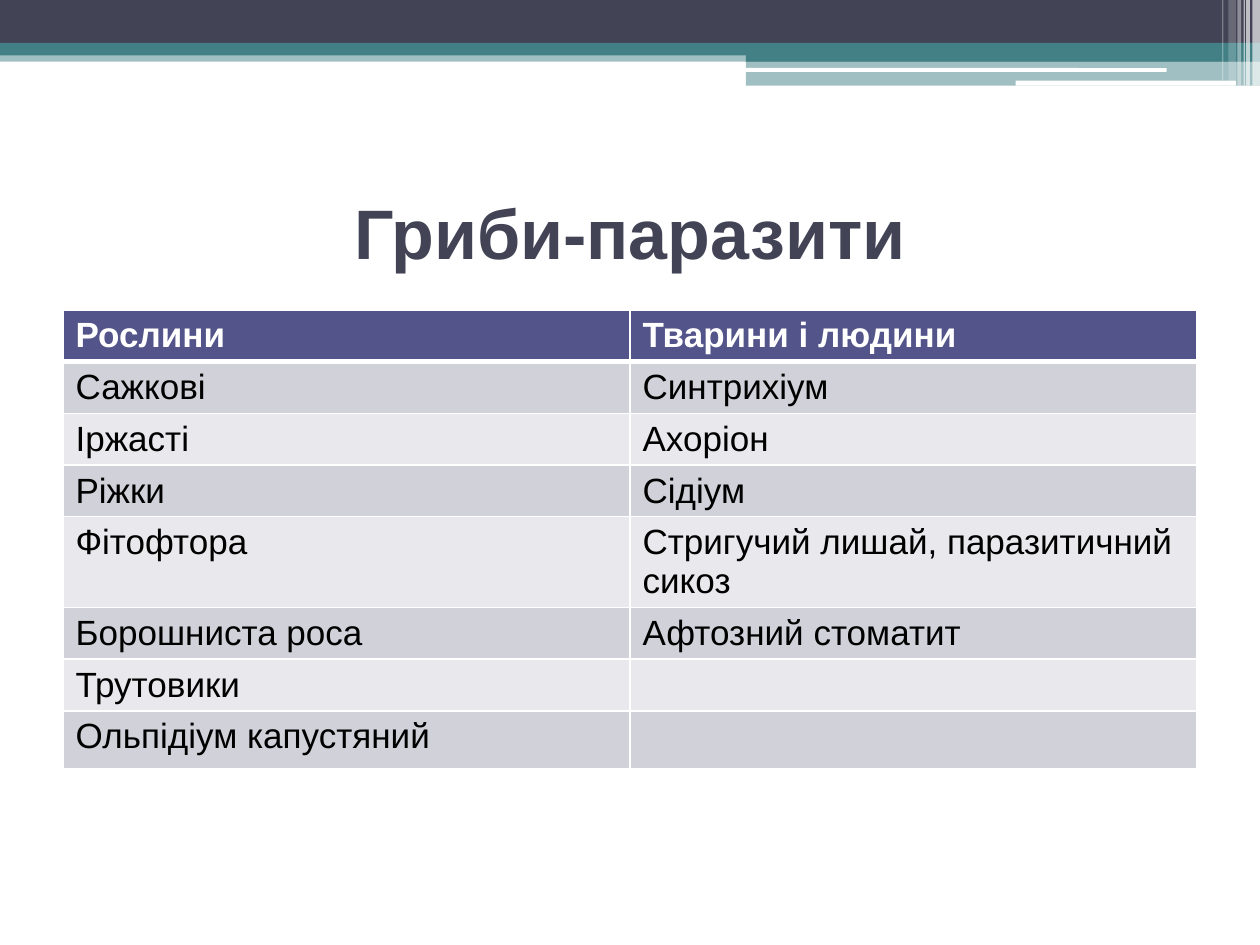
from lxml import etree
from pptx import Presentation
from pptx.dml.color import RGBColor
from pptx.enum.shapes import MSO_SHAPE
from pptx.enum.text import MSO_ANCHOR, PP_ALIGN
from pptx.oxml.ns import qn
from pptx.util import Inches, Pt

RECT, ROUND = MSO_SHAPE.RECTANGLE, MSO_SHAPE.ROUNDED_RECTANGLE
MIDDLE, CENTER = MSO_ANCHOR.MIDDLE, PP_ALIGN.CENTER
FONT = "Arial"
DARK, TEAL, WHITE, BLACK = "424456", "438086", "FFFFFF", "000000"
HEADER_FILL, BANDS = "53548A", ("D1D1DA", "E9E9ED")

TITLE = "Гриби-паразити"
ROWS = [
    ("Рослини", "Тварини і людини"),
    ("Сажкові", "Синтрихіум"),
    ("Іржасті", "Ахоріон"),
    ("Ріжки", "Сідіум"),
    ("Фітофтора", "Стригучий лишай, паразитичний сикоз"),
    ("Борошниста роса", "Афтозний стоматит"),
    ("Трутовики", ""),
    ("Ольпідіум капустяний", ""),
]
ROW_HEIGHT, LAST_ROW_HEIGHT = 0.41, 0.46

BANNER = [
    (RECT, (0, 0.4, 10, 0.09), TEAL, 50),
    (RECT, (0, 0, 10, 0.34), DARK, 100),
    (RECT, (0, 0.34, 10, 0.1), TEAL, 100),
    (RECT, (5.92, 0.39, 4.08, 0.1), TEAL, 100),
    (RECT, (5.92, 0.48, 4.08, 0.2), TEAL, 50),
    (ROUND, (5.91, 0.54, 3.35, 0.03), WHITE, 100),
    (ROUND, (8.06, 0.64, 1.75, 0.04), WHITE, 100),
]
STRIPES = [
    (9.94, 0.06, 0.68, 65),
    (9.89, 0.03, 0.68, 65),
    (9.87, 0.01, 0.68, 60),
    (9.82, 0.03, 0.68, 40),
    (9.75, 0.06, 0.64, 20),
    (9.7, 0.01, 0.64, 30),
]


def paint(fill, color):
    fill.solid()
    fill.fore_color.rgb = RGBColor.from_string(color)


def add_bar(slide, kind, place, color, opacity):
    bar = slide.shapes.add_shape(kind, *map(Inches, place))
    bar.shadow.inherit = False
    bar.line.fill.background()
    paint(bar.fill, color)
    if opacity < 100:
        tone = bar.fill._xPr.find(qn("a:solidFill"))[0]
        etree.SubElement(tone, qn("a:alpha"), val=str(opacity * 1000))


def add_text(para, text, size, color, bold):
    span = para.add_run()
    span.text = text
    span.font.name = FONT
    span.font.size = Pt(size)
    span.font.bold = bold
    paint(span.font.fill, color)


def add_borders(cell, widths):
    properties = cell._tc.get_or_add_tcPr()
    for side, width in widths.items():
        line = etree.SubElement(properties, qn(f"a:ln{side}"), w=str(Pt(width)))
        fill = etree.SubElement(line, qn("a:solidFill"))
        etree.SubElement(fill, qn("a:srgbClr"), val=WHITE)


def add_title(slide):
    title = slide.shapes.title
    title.left, title.top, title.width, title.height = map(Inches, (0.5, 1.25, 9, 1.17))
    frame = title.text_frame
    frame.word_wrap = True
    frame.vertical_anchor = MIDDLE
    para = frame.paragraphs[0]
    para.alignment = CENTER
    add_text(para, TITLE, 40, DARK, True)


def add_fungi_table(slide):
    height = ROW_HEIGHT * (len(ROWS) - 1) + LAST_ROW_HEIGHT
    place = map(Inches, (0.5, 2.46, 9, height))
    table = slide.shapes.add_table(len(ROWS), len(ROWS[0]), *place).table
    for index, texts in enumerate(ROWS):
        header = index == 0
        last = index == len(ROWS) - 1
        table.rows[index].height = Inches(LAST_ROW_HEIGHT if last else ROW_HEIGHT)
        widths = {"L": 1, "R": 1, "T": 3 if index == 1 else 1, "B": 3 if header else 1}
        for column, text in enumerate(texts):
            cell = table.cell(index, column)
            add_borders(cell, widths)
            paint(cell.fill, HEADER_FILL if header else BANDS[(index - 1) % 2])
            if text:
                para = cell.text_frame.paragraphs[0]
                add_text(para, text, 20, WHITE if header else BLACK, header)


def main():
    deck = Presentation()
    deck.slide_width, deck.slide_height = Inches(10), Inches(7.5)
    slide = deck.slides.add_slide(deck.slide_layouts[5])
    paint(slide.background.fill, WHITE)
    for bar in BANNER:
        add_bar(slide, *bar)
    for left, width, height, opacity in STRIPES:
        add_bar(slide, RECT, (left, 0, width, height), WHITE, opacity)
    add_title(slide)
    add_fungi_table(slide)
    deck.save("out.pptx")


if __name__ == "__main__":
    main()
